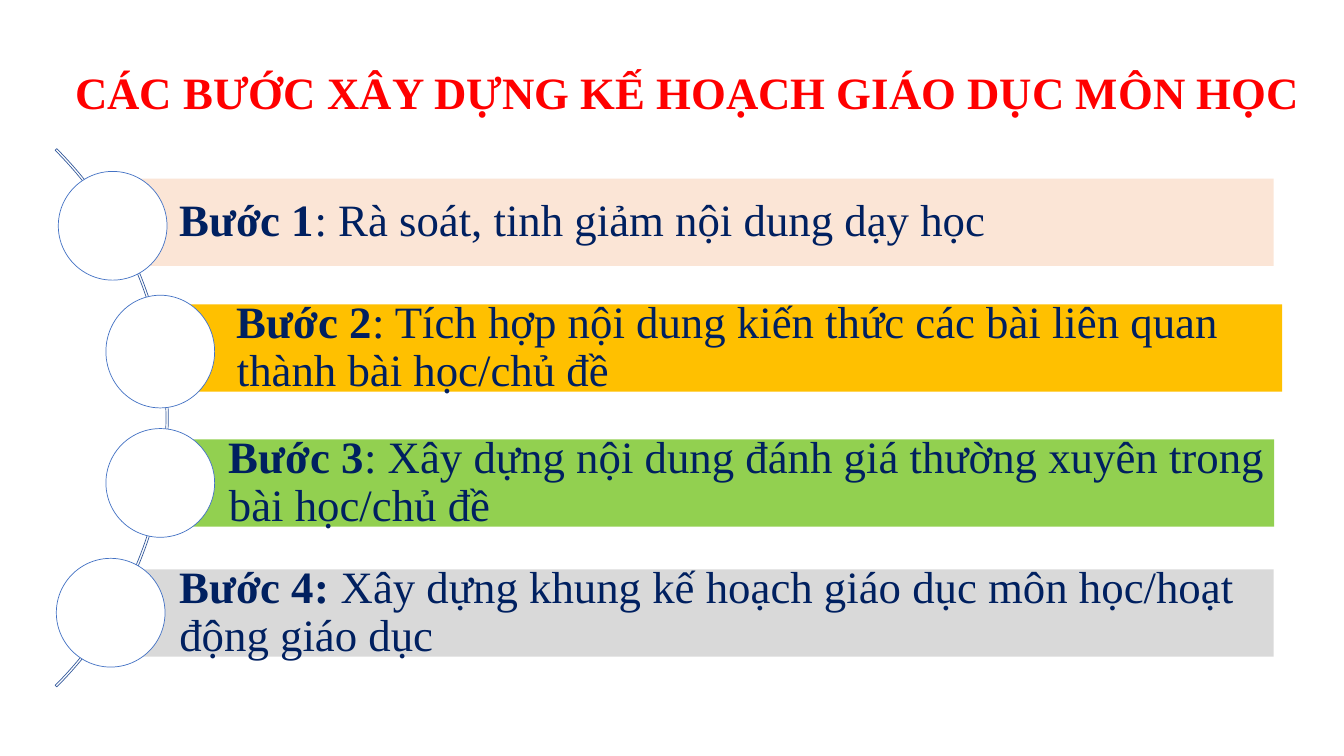
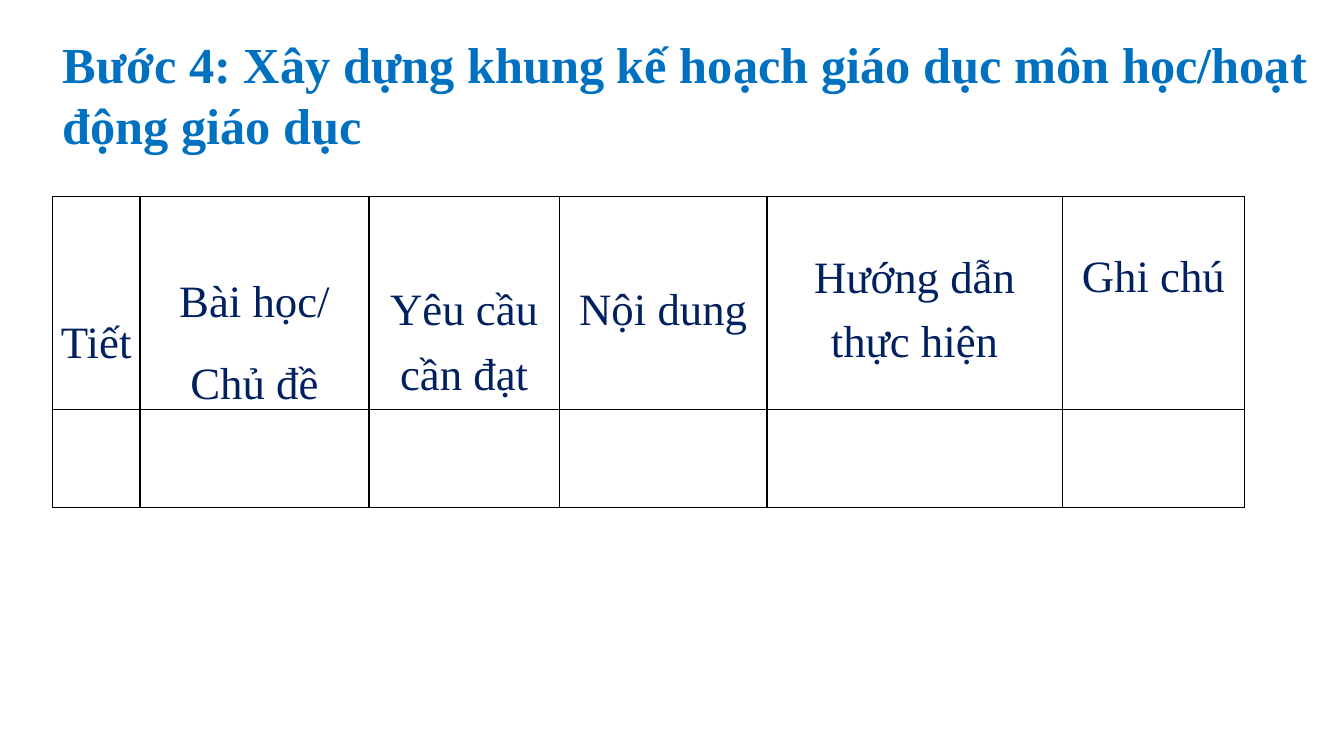
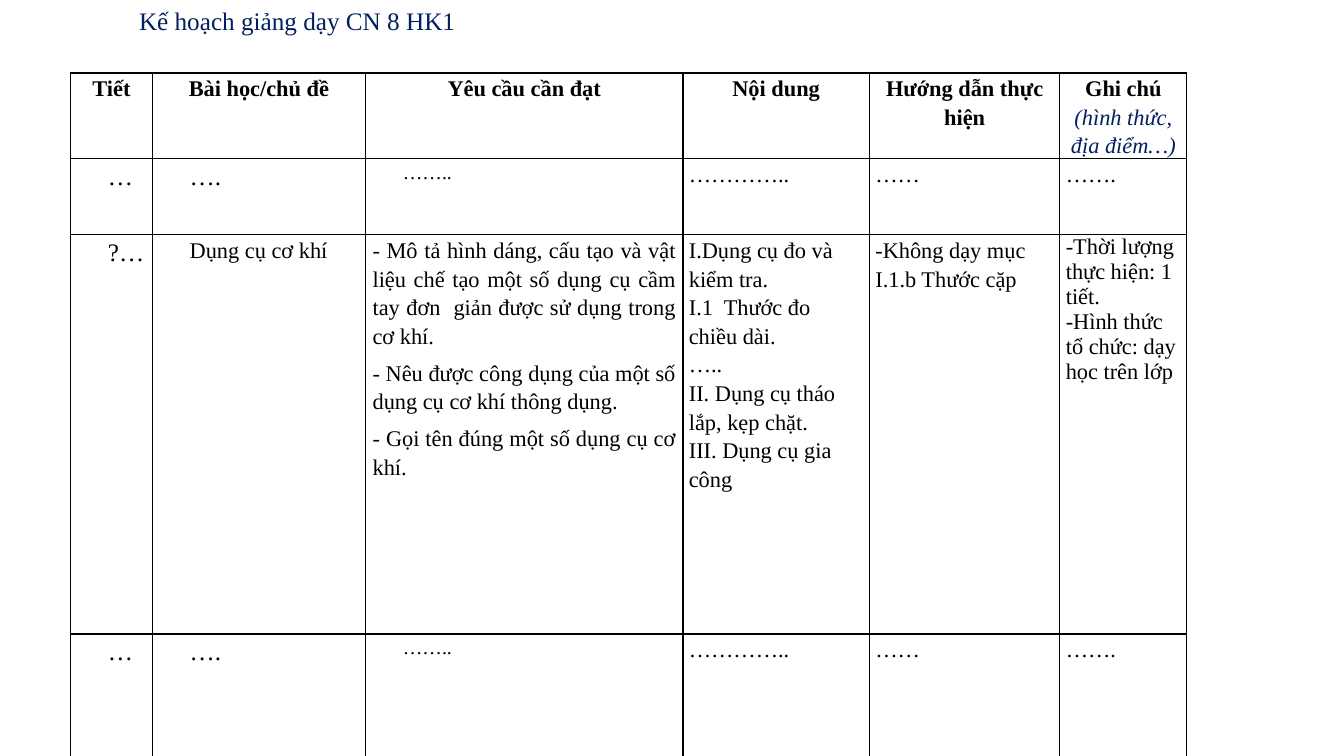
from dataclasses import dataclass

from lxml import etree
from pptx import Presentation
from pptx.dml.color import RGBColor
from pptx.enum.shapes import MSO_SHAPE
from pptx.enum.text import MSO_ANCHOR, MSO_AUTO_SIZE, PP_ALIGN
from pptx.oxml.ns import qn
from pptx.util import Cm, Pt

RECT, OVAL, ARC = MSO_SHAPE.RECTANGLE, MSO_SHAPE.OVAL, MSO_SHAPE.BLOCK_ARC
LEFT, CENTER, JUSTIFY = PP_ALIGN.LEFT, PP_ALIGN.CENTER, PP_ALIGN.JUSTIFY
TOP, MIDDLE = MSO_ANCHOR.TOP, MSO_ANCHOR.MIDDLE
NO_AUTOFIT = MSO_AUTO_SIZE.NONE

FONT = "Times New Roman"
TITLE_ONLY = 5
NAVY, BLACK, WHITE = "002060", "000000", "FFFFFF"
RED, BLUE = "FF0000", "0070C0"
ARC_LINE, CIRCLE_LINE = "365B9D", "4472C4"
BAR_HEIGHT, CIRCLE_SIZE = 2.2, 2.74

STEPS = [
    ("Bước 1", ": Rà soát, tinh giảm nội dung dạy học",
     "FBE5D6", (2.79, 4.5, 29.31), (1.47, 4.32, CIRCLE_SIZE)),
    ("Bước 2", ": Tích hợp nội dung kiến thức các bài liên quan thành bài học/chủ đề",
     "FFC000", (4.24, 7.67, 28.07), (2.67, 7.44, 2.84)),
    ("Bước 3", ": Xây dựng nội dung đánh giá thường xuyên trong bài học/chủ đề",
     "92D050", (4.04, 11.07, 28.07), (2.67, 10.8, CIRCLE_SIZE)),
    ("Bước 4: ", "Xây dựng khung kế hoạch giáo dục môn học/hoạt động giáo dục",
     "D9D9D9", (2.79, 14.35, 29.31), (1.42, 14.07, CIRCLE_SIZE)),
]


@dataclass
class Run:
    """A piece of text with its own look."""
    text: str
    color: str = BLACK
    bold: bool = False
    italic: bool = False


@dataclass
class Para:
    """A paragraph: its runs, size in points and layout."""
    runs: list
    size: float = 16
    align: PP_ALIGN = LEFT
    spacing: float = 1.0
    gap: float = 0
    indent: float = 0


@dataclass
class Cell:
    """The paragraphs of a table cell with its margins in centimetres."""
    paras: list
    side: float = 0.15
    top: float = 0
    bottom: float = 0


def rgb(color):
    """Turn a hex string into a colour."""
    return RGBColor.from_string(color)


def write(tf, paras):
    """Fill a text frame with paragraphs, run by run."""
    for i, para in enumerate(paras):
        p = tf.add_paragraph() if i else tf.paragraphs[0]
        p.alignment, p.line_spacing = para.align, para.spacing
        p.space_before = p.space_after = Pt(para.gap)
        if para.indent:
            p._p.get_or_add_pPr().set("indent", str(Cm(para.indent)))
        for run in para.runs:
            r = p.add_run()
            r.text = run.text
            r.font.name, r.font.size = FONT, Pt(para.size)
            r.font.bold, r.font.italic = run.bold, run.italic
            r.font.color.rgb = rgb(run.color)


def add_titled_slide(prs, box, para, anchor=TOP):
    """Add a title-only slide and place its title."""
    s = prs.slides.add_slide(prs.slide_layouts[TITLE_ONLY])
    title = s.shapes.title
    title.left, title.top, title.width, title.height = map(Cm, box)
    tf = title.text_frame
    tf.word_wrap, tf.auto_size = True, NO_AUTOFIT
    tf.vertical_anchor = anchor
    write(tf, [para])
    return s


def add_shape(s, kind, box, fill=None, line=None):
    """Add a flat preset shape."""
    sp = s.shapes.add_shape(kind, *map(Cm, box))
    sp.shadow.inherit = False
    if fill:
        sp.fill.solid()
        sp.fill.fore_color.rgb = rgb(fill)
    else:
        sp.fill.background()
    if line:
        sp.line.color.rgb = rgb(line)
        sp.line.width = Pt(0.5)
    else:
        sp.line.fill.background()
    return sp


def add_step(s, label, text, fill, bar, circle):
    """Add one step: a coloured bar and the circle over its left end."""
    sp = add_shape(s, RECT, (*bar, BAR_HEIGHT), fill)
    tf = sp.text_frame
    tf.word_wrap, tf.vertical_anchor = True, MIDDLE
    tf.margin_left = Cm(1.73)
    tf.margin_top = tf.margin_right = tf.margin_bottom = Cm(0.23)
    runs = [Run(label, NAVY, bold=True), Run(text, NAVY)]
    write(tf, [Para(runs, 32, spacing=0.9)])
    left, top, height = circle
    add_shape(s, OVAL, (left, top, CIRCLE_SIZE, height), WHITE, CIRCLE_LINE)


def add_borders(cell):
    """Draw a thin black line on each side of a cell."""
    tc_pr = cell._tc.get_or_add_tcPr()
    for i, side in enumerate(("a:lnL", "a:lnR", "a:lnT", "a:lnB")):
        ln = etree.Element(qn(side), w=str(Pt(1)))
        fill = etree.SubElement(ln, qn("a:solidFill"))
        etree.SubElement(fill, qn("a:srgbClr"), val=BLACK)
        tc_pr.insert(i, ln)


def add_grid(s, left, top, widths, heights, rows, anchor=TOP):
    """Add a white table with black borders."""
    frame = s.shapes.add_table(len(heights), len(widths), Cm(left), Cm(top),
                               Cm(sum(widths)), Cm(sum(heights)))
    table = frame.table
    table.first_row = table.horz_banding = False
    for column, width in zip(table.columns, widths):
        column.width = Cm(width)
    for row, height, contents in zip(table.rows, heights, rows):
        row.height = Cm(height)
        for cell, content in zip(row.cells, contents):
            cell.fill.solid()
            cell.fill.fore_color.rgb = rgb(WHITE)
            cell.vertical_anchor = anchor
            cell.margin_left = cell.margin_right = Cm(content.side)
            cell.margin_top, cell.margin_bottom = Cm(content.top), Cm(content.bottom)
            write(cell.text_frame, content.paras)
            add_borders(cell)


def frame_head(*lines, top=0.0):
    """Make a large heading cell."""
    paras = [Para([Run(line, NAVY)], 32, CENTER, 1.3, 6) for line in lines]
    return Cell(paras, 0.18, top)


def plan_head(text, note=None):
    """Make a bold heading cell, with an italic note if given."""
    paras = [Para([Run(text, bold=True)], 16, CENTER, 1.15)]
    if note:
        paras.append(Para([Run(note, NAVY, italic=True)], 16, CENTER, 1.15))
    return Cell(paras)


def spaced(*lines, size=16, align=LEFT, indent=0.0):
    """Make a cell whose paragraphs stand apart."""
    return Cell([Para([Run(line)], size, align, 1.15, 3, indent)
                 for line in lines], 0.18)


def plain(*lines, spacing=1.15):
    """Make a cell of closely set lines."""
    return Cell([Para([Run(line)], spacing=spacing) for line in lines])


def build_steps(prs):
    """Build the slide of the four steps."""
    title = Run("CÁC BƯỚC XÂY DỰNG KẾ HOẠCH GIÁO DỤC MÔN HỌC", RED, bold=True)
    s = add_titled_slide(prs, (1.55, 1.2, 31.55, 2.41),
                         Para([title], 32, CENTER, 0.9), MIDDLE)
    arc = add_shape(s, ARC, (-14.94, 0.94, 19.18, 19.18), line=ARC_LINE)
    for i, value in enumerate((189, 27, 0.003)):
        arc.adjustments[i] = value
    for step in STEPS:
        add_step(s, *step)


def build_frame(prs):
    """Build the slide of the empty plan frame."""
    title = Run("Bước 4: Xây dựng khung kế hoạch giáo dục môn học/hoạt động giáo dục",
                BLUE, bold=True)
    s = add_titled_slide(prs, (1.32, 0.71, 32.26, 3.33), Para([title], 36))
    lowered = 1.65
    note = Para([Run("Ghi chú", NAVY)], 32, CENTER)
    heads = [
        frame_head("Tiết", top=lowered),
        frame_head("Bài học/", "Chủ đề", top=lowered),
        frame_head("Yêu cầu cần đạt", top=lowered),
        frame_head("Nội dung"),
        frame_head("Hướng dẫn thực hiện"),
        Cell([note], 0.18, bottom=1.3),
    ]
    add_grid(s, 1.32, 4.95, (2.21, 5.77, 4.8, 5.23, 7.44, 4.6), (5.37, 2.46),
             [heads, [Cell([])] * len(heads)], MIDDLE)


def build_plan(prs):
    """Build the slide of the sample teaching plan."""
    title = Run("Kế hoạch giảng dạy CN 8 HK1", NAVY)
    s = add_titled_slide(prs, (3.25, 0, 23.29, 1.8), Para([title], 18))
    heads = [plan_head(text) for text in (
        "Tiết", "Bài học/chủ đề", "Yêu cầu cần đạt", "Nội dung", "Hướng dẫn thực hiện")]
    heads.append(plan_head("Ghi chú", "(hình thức, địa điểm…)"))
    indent = 0.76
    dots = [
        spaced("…", size=18, indent=indent),
        spaced("….", size=18, indent=indent),
        spaced("……..", size=14, align=JUSTIFY, indent=indent),
        plain("………….."),
        plain("……"),
        plain("……."),
    ]
    lesson = [
        spaced("?…", size=18, indent=indent),
        spaced("Dụng cụ cơ khí", indent=indent),
        spaced("- Mô tả hình dáng, cấu tạo và vật liệu chế tạo một số dụng cụ "
               "cầm tay đơn  giản được sử dụng trong cơ khí.",
               "- Nêu được công dụng của một số dụng cụ cơ khí thông dụng.",
               "- Gọi tên đúng một số dụng cụ cơ khí.", align=JUSTIFY),
        plain("I.Dụng cụ đo và kiểm tra.", "I.1  Thước đo chiều dài.", "…..",
              "II. Dụng cụ tháo lắp, kẹp chặt.", "III. Dụng cụ gia công"),
        plain("-Không dạy mục I.1.b Thước cặp"),
        plain("-Thời lượng thực hiện: 1 tiết.",
              "-Hình thức tổ chức: dạy học trên lớp", spacing=1.0),
    ]
    add_grid(s, 1.78, 1.84, (2.06, 5.37, 8.0, 4.7, 4.8, 3.2),
             (2.16, 1.91, 10.06, 4.14), [heads, dots, lesson, dots])


def main():
    """Build and save the presentation."""
    prs = Presentation()
    prs.slide_width, prs.slide_height = Cm(33.87), Cm(19.05)
    build_steps(prs)
    build_frame(prs)
    build_plan(prs)
    prs.save("out.pptx")


if __name__ == "__main__":
    main()
